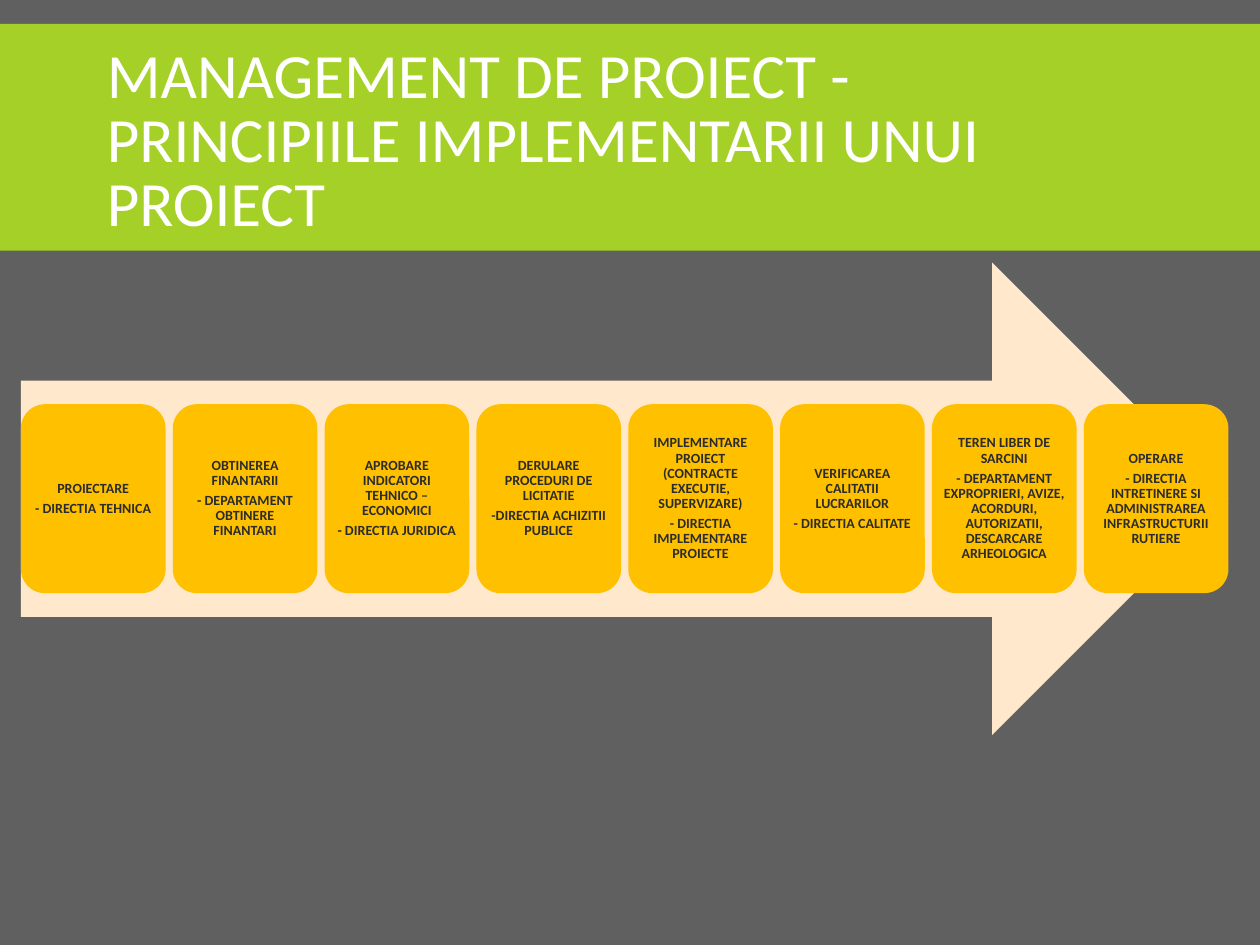
"""Build the slide on the principles of implementing a project."""
from pptx import Presentation
from pptx import util as u
from pptx.dml.color import RGBColor
from pptx.enum import shapes, text

TITLE = "MANAGEMENT DE PROIECT - PRINCIPIILE IMPLEMENTARII UNUI PROIECT"
STEPS = [
    ("PROIECTARE", "- DIRECTIA TEHNICA"),
    ("OBTINEREA FINANTARII", "- DEPARTAMENT OBTINERE FINANTARI"),
    ("APROBARE INDICATORI TEHNICO – ECONOMICI", "- DIRECTIA JURIDICA"),
    ("DERULARE PROCEDURI DE LICITATIE", "-DIRECTIA ACHIZITII PUBLICE"),
    ("IMPLEMENTARE PROIECT (CONTRACTE EXECUTIE, SUPERVIZARE)",
     "- DIRECTIA IMPLEMENTARE PROIECTE"),
    ("VERIFICAREA CALITATII LUCRARILOR", "- DIRECTIA CALITATE"),
    ("TEREN LIBER DE SARCINI",
     "- DEPARTAMENT EXPROPRIERI, AVIZE, ACORDURI, AUTORIZATII, DESCARCARE ARHEOLOGICA"),
    ("OPERARE", "- DIRECTIA INTRETINERE SI ADMINISTRAREA INFRASTRUCTURII RUTIERE"),
]

GREY = RGBColor(0x60, 0x60, 0x60)
GREEN = RGBColor(0xA5, 0xD0, 0x28)
CREAM = RGBColor(0xFF, 0xE8, 0xCC)
AMBER = RGBColor(0xFF, 0xC0, 0x00)
DARK = RGBColor(0x2C, 0x2C, 0x2C)
WHITE = RGBColor(0xFF, 0xFF, 0xFF)

SLIDE_WIDTH, SLIDE_HEIGHT = 720, 540
ARROW_LEFT, ARROW_TOP, ARROW_WIDTH, ARROW_HEIGHT = 12, 150, 690, 270
STEP_GAP = 4.1
STEP_WIDTH = (ARROW_WIDTH - STEP_GAP * (len(STEPS) - 1)) / len(STEPS)
STEP_HEIGHT = ARROW_HEIGHT * 0.4
STEP_TOP = ARROW_TOP + (ARROW_HEIGHT - STEP_HEIGHT) / 2


def add_filled_shape(slide, kind, box, color):
    shape = slide.shapes.add_shape(kind, *map(u.Pt, box))
    shape.shadow.inherit = False
    shape.fill.solid()
    shape.fill.fore_color.rgb = color
    shape.line.fill.background()
    return shape


def write_text(shape, content, size, color, bold, align, spacing, after, inset):
    frame = shape.text_frame
    frame.text = content
    frame.word_wrap = True
    frame.vertical_anchor = text.MSO_ANCHOR.MIDDLE
    frame.margin_left = frame.margin_right = u.Pt(inset[0])
    frame.margin_top = frame.margin_bottom = u.Pt(inset[1])
    for paragraph in frame.paragraphs:
        paragraph.alignment = align
        paragraph.line_spacing = spacing
        paragraph.space_after = u.Pt(after)
        for run in paragraph.runs:
            run.font.name = "Calibri"
            run.font.size = u.Pt(size)
            run.font.bold = bold
            run.font.color.rgb = color


def main():
    presentation = Presentation()
    presentation.slide_width = u.Pt(SLIDE_WIDTH)
    presentation.slide_height = u.Pt(SLIDE_HEIGHT)
    slide = presentation.slides.add_slide(presentation.slide_layouts[6])
    slide.background.fill.solid()
    slide.background.fill.fore_color.rgb = GREY

    preset = shapes.MSO_SHAPE
    add_filled_shape(slide, preset.RECTANGLE, (0, 13.7, SLIDE_WIDTH, 129.6), GREEN)
    title = slide.shapes.add_textbox(*map(u.Pt, (54, 22.3, 612, 118.8)))
    write_text(title, TITLE, 36, WHITE, False, text.PP_ALIGN.LEFT, 0.85, 0, (7.2, 3.6))

    arrow_box = (ARROW_LEFT, ARROW_TOP, ARROW_WIDTH, ARROW_HEIGHT)
    add_filled_shape(slide, preset.RIGHT_ARROW, arrow_box, CREAM)
    for index, step in enumerate(STEPS):
        left = ARROW_LEFT + index * (STEP_WIDTH + STEP_GAP)
        box = (left, STEP_TOP, STEP_WIDTH, STEP_HEIGHT)
        shape = add_filled_shape(slide, preset.ROUNDED_RECTANGLE, box, AMBER)
        write_text(shape, "\n".join(step), 8, DARK, True,
                   text.PP_ALIGN.CENTER, 0.9, 2.8, (2.2, 2.2))

    presentation.save("out.pptx")


if __name__ == "__main__":
    main()
